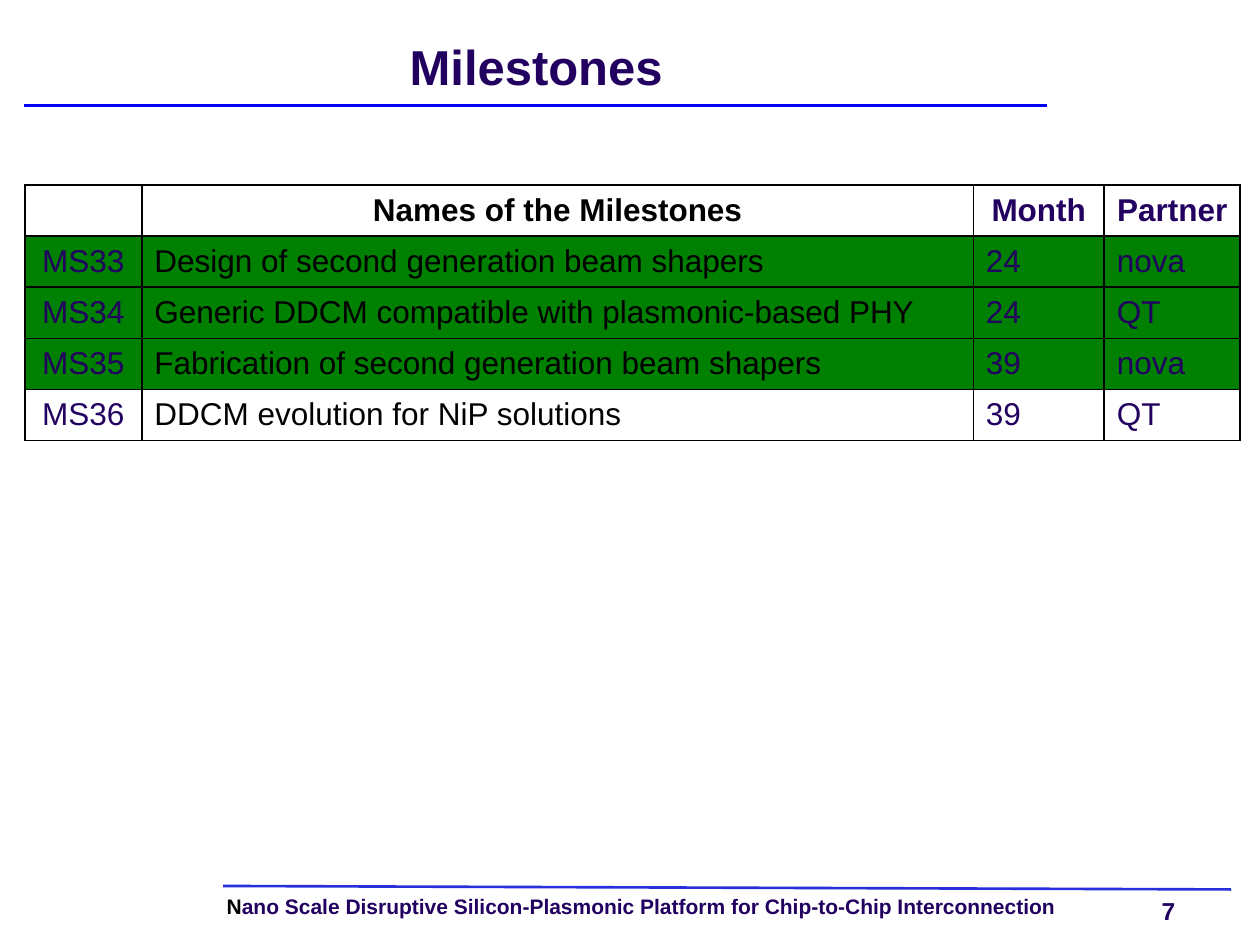
from pptx import Presentation
from pptx import util as u
from pptx.dml.color import RGBColor
from pptx.enum import shapes, text
from pptx.oxml import parse_xml
from pptx.oxml.ns import nsdecls, qn

NAVY = RGBColor(0x22, 0x00, 0x60)
BLACK = RGBColor(0, 0, 0)
WHITE = RGBColor(0xFF, 0xFF, 0xFF)
DONE_GREEN = RGBColor(0x00, 0x80, 0x00)
TITLE_BLUE = RGBColor(0x00, 0x00, 0xFF)
FOOTER_BLUE = RGBColor(0x26, 0x2F, 0xDA)

COLUMN_WIDTHS = (2.36, 16.76, 2.64, 2.74)
ROW_HEIGHT = 1.03
HEADINGS = ("", "Names of the Milestones", "Month", "Partner")
# Each milestone: code, name, month, partner, done
MILESTONES = (
    ("MS33", "Design of second generation beam shapers", "24", "nova", True),
    ("MS34", "Generic DDCM compatible with plasmonic-based PHY", "24", "QT", True),
    ("MS35", "Fabrication of second generation beam shapers", "39", "nova", True),
    ("MS36", "DDCM evolution for NiP solutions", "39", "QT", False),
)


def write(frame, *runs, size, bold=False, align=text.PP_ALIGN.LEFT, spacing=None):
    """Fill the first paragraph with (wording, colour) runs."""
    paragraph = frame.paragraphs[0]
    paragraph.alignment = align
    paragraph.font.size = u.Pt(size)
    if spacing:
        paragraph.line_spacing = spacing
    for wording, colour in runs:
        run = paragraph.add_run()
        run.text = wording
        run.font.name = "Arial"
        run.font.size = u.Pt(size)
        run.font.bold = bold
        run.font.color.rgb = colour


def add_text(slide, left, top, width, height, *runs, wrap=True,
             anchor=text.MSO_ANCHOR.TOP, **style):
    box = slide.shapes.add_textbox(u.Cm(left), u.Cm(top), u.Cm(width), u.Cm(height))
    frame = box.text_frame
    frame.margin_left = frame.margin_top = frame.margin_right = frame.margin_bottom = 0
    frame.word_wrap = wrap
    frame.vertical_anchor = anchor
    write(frame, *runs, **style)


def add_rule(slide, x1, y1, x2, y2, colour):
    rule = slide.shapes.add_connector(
        shapes.MSO_CONNECTOR.STRAIGHT, u.Cm(x1), u.Cm(y1), u.Cm(x2), u.Cm(y2))
    rule.line.color.rgb = colour
    rule.line.width = u.Pt(1.5)
    rule._element.spPr.append(parse_xml(f"<a:effectLst {nsdecls('a')}/>"))


def set_borders(cell):
    properties = cell._tc.get_or_add_tcPr()
    for position, side in enumerate(("lnL", "lnR", "lnT", "lnB")):
        properties.insert(position, parse_xml(
            f'<a:{side} {nsdecls("a")} w="{u.Pt(1)}"><a:solidFill>'
            f'<a:srgbClr val="{BLACK}"/></a:solidFill></a:{side}>'))


def fill_cell(cell, wording, fill, colour, **style):
    cell.fill.solid()
    cell.fill.fore_color.rgb = fill
    cell.vertical_anchor = text.MSO_ANCHOR.MIDDLE
    runs = [(wording, colour)] if wording else []
    write(cell.text_frame, *runs, size=18, **style)
    set_borders(cell)


def add_milestone_table(slide):
    row_count = len(MILESTONES) + 1
    table = slide.shapes.add_table(
        row_count, len(HEADINGS), u.Cm(0.5), u.Cm(3.73),
        u.Cm(sum(COLUMN_WIDTHS)), u.Cm(ROW_HEIGHT * row_count)).table
    table.horz_banding = False
    table.first_row = False
    for column, width in zip(table.columns, COLUMN_WIDTHS):
        column.width = u.Cm(width)
    for row in table.rows:
        row.height = u.Cm(ROW_HEIGHT)

    # Only the name column is black; codes and headings are centred
    for row, (*wordings, done) in enumerate([(*HEADINGS, False), *MILESTONES]):
        for column, wording in enumerate(wordings):
            centred = row == 0 or column == 0
            fill_cell(table.cell(row, column), wording,
                      DONE_GREEN if done else WHITE,
                      BLACK if column == 1 else NAVY, bold=row == 0,
                      align=text.PP_ALIGN.CENTER if centred else text.PP_ALIGN.LEFT)


def add_footer(slide):
    add_text(slide, 4.57, 18.06, 18.14, 0.46, ("N", BLACK),
             ("ano Scale Disruptive Silicon-Plasmonic Platform for "
              "Chip-to-Chip Interconnection", NAVY),
             size=12, bold=True, spacing=0.9)
    add_text(slide, 23.42, 18.06, 1.02, 0.58, ("7", NAVY),
             size=14, bold=True, wrap=False)
    add_rule(slide, 4.5, 17.86, 24.82, 17.93, FOOTER_BLUE)


def main():
    deck = Presentation()
    deck.slide_width, deck.slide_height = u.Cm(25.4), u.Cm(19.05)
    slide = deck.slides.add_slide(deck.slide_layouts[6])

    # Footer and title
    add_footer(slide)
    add_rule(slide, 0.48, 2.13, 21.11, 2.13, TITLE_BLUE)
    add_text(slide, 0.51, 0.51, 20.6, 1.7, ("Milestones", NAVY), size=28, bold=True,
             align=text.PP_ALIGN.CENTER, anchor=text.MSO_ANCHOR.MIDDLE,
             spacing=u.Pt(32))

    # Milestones
    add_milestone_table(slide)
    deck.save("out.pptx")


if __name__ == "__main__":
    main()
